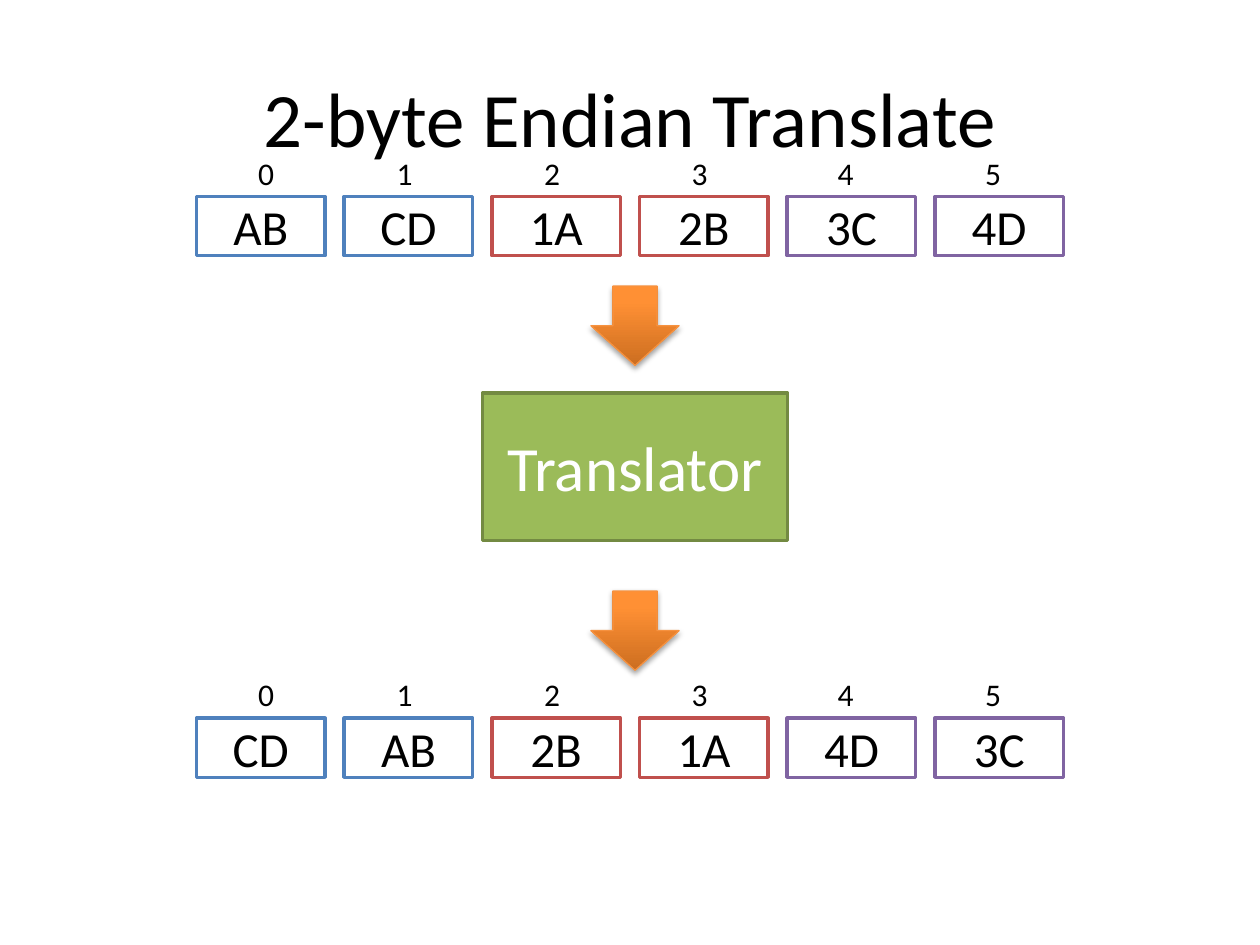
from pptx import Presentation
from pptx.dml.color import RGBColor
from pptx.enum.shapes import MSO_SHAPE
from pptx.enum.text import MSO_ANCHOR, PP_ALIGN
from pptx.oxml import parse_xml
from pptx.oxml.ns import nsdecls
from pptx.util import Inches, Pt

RECT, ARROW = MSO_SHAPE.RECTANGLE, MSO_SHAPE.DOWN_ARROW
LEFT, CENTER = PP_ALIGN.LEFT, PP_ALIGN.CENTER
TOP, MIDDLE = MSO_ANCHOR.TOP, MSO_ANCHOR.MIDDLE
BLUE, RED, PURPLE = "4F81BD", "C0504D", "8064A2"

GRAD = f"""<a:gradFill {nsdecls('a')} rotWithShape="1"><a:gsLst>
<a:gs pos="0"><a:srgbClr val="CC6E20"/></a:gs>
<a:gs pos="80000"><a:srgbClr val="FF9034"/></a:gs>
<a:gs pos="100000"><a:srgbClr val="FF9136"/></a:gs>
</a:gsLst><a:lin ang="16200000" scaled="0"/></a:gradFill>"""
SHADOW = f"""<a:effectLst {nsdecls('a')}>
<a:outerShdw blurRad="{Pt(3.1)}" dist="{Pt(1.8)}" dir="5400000" rotWithShape="0">
<a:srgbClr val="000000"><a:alpha val="35000"/></a:srgbClr>
</a:outerShdw></a:effectLst>"""

rgb = RGBColor.from_string
prs = Presentation()
prs.slide_width, prs.slide_height = Inches(10), Inches(7.5)
shapes = prs.slides.add_slide(prs.slide_layouts[6]).shapes


def put(text, x, y, w, h, size, color="000000", fill=None, line=None,
        align=CENTER, anchor=MIDDLE, wrap=True):
    """Add text, in a filled rectangle if a fill is given."""
    box = [Inches(v) for v in (x, y, w, h)]
    if fill:
        shape = shapes.add_shape(RECT, *box)
        shape.shadow.inherit = False
        shape.fill.solid()
        shape.fill.fore_color.rgb = rgb(fill)
        shape.line.color.rgb = rgb(line)
        shape.line.width = Pt(2)
    else:
        shape = shapes.add_textbox(*box)
    frame = shape.text_frame
    frame.word_wrap, frame.vertical_anchor = wrap, anchor
    para = frame.paragraphs[0]
    para.alignment = align
    run = para.add_run()
    run.text = text
    run.font.name, run.font.size = "Calibri", Pt(size)
    run.font.color.rgb = rgb(color)


# Title and translator
put("2-byte Endian Translate", 0.5, 0.3, 9, 1.25, 44)
put("Translator", 3.83, 3.12, 2.42, 1.17, 36, color="FFFFFF",
    fill="9BBB59", line="738A42")

# Byte rows before and after, with their offsets
rows = [(1.56, ["AB", "CD", "1A", "2B", "3C", "4D"]),
        (5.7, ["CD", "AB", "2B", "1A", "4D", "3C"])]
marks = [1.95, 3.05, 4.22, 5.39, 6.55, 7.72]
for y, row in rows:
    for i, byte in enumerate(row):
        put(byte, 1.56 + 1.172 * i, y, 1.02, 0.47, 28,
            fill="FFFFFF", line=(BLUE, RED, PURPLE)[i // 2])
        put(str(i), marks[i], y - 0.39, 0.33, 0.4, 18,
            align=LEFT, anchor=TOP, wrap=False)

# Arrows into and out of the translator
for y in (2.27, 4.69):
    arrow = shapes.add_shape(ARROW, Inches(4.69), Inches(y),
                             Inches(0.7), Inches(0.63))
    arrow.line.color.rgb = rgb("F69240")
    arrow.line.width = Pt(0.75)
    props = arrow._element.spPr
    props.insert(2, parse_xml(GRAD))
    props.append(parse_xml(SHADOW))

prs.save("out.pptx")
